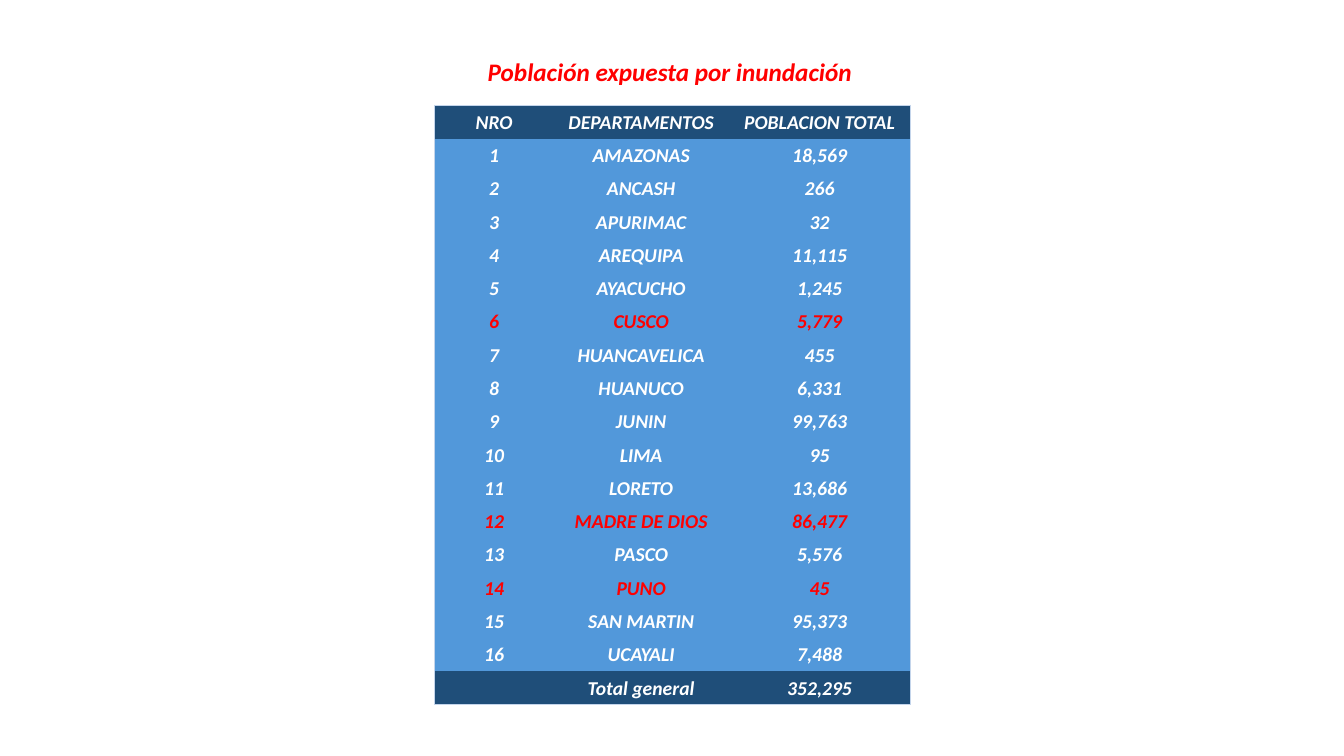
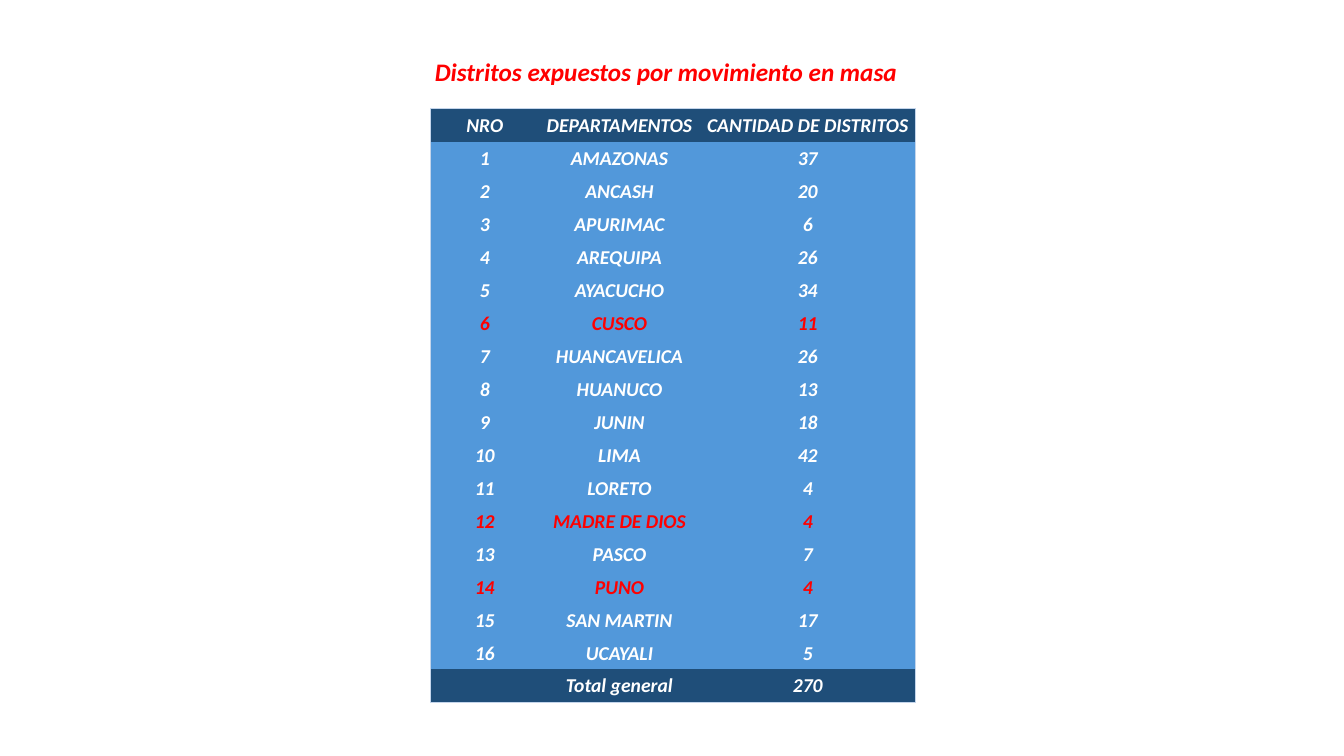
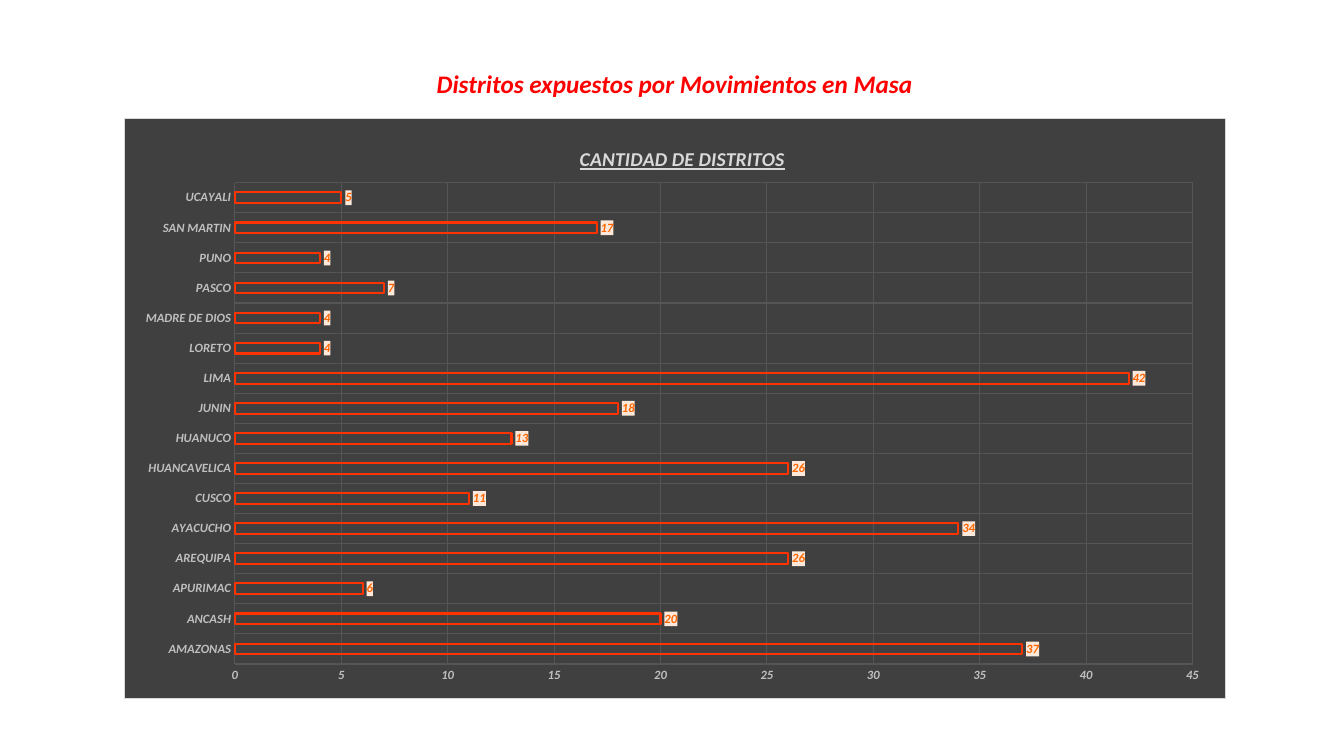
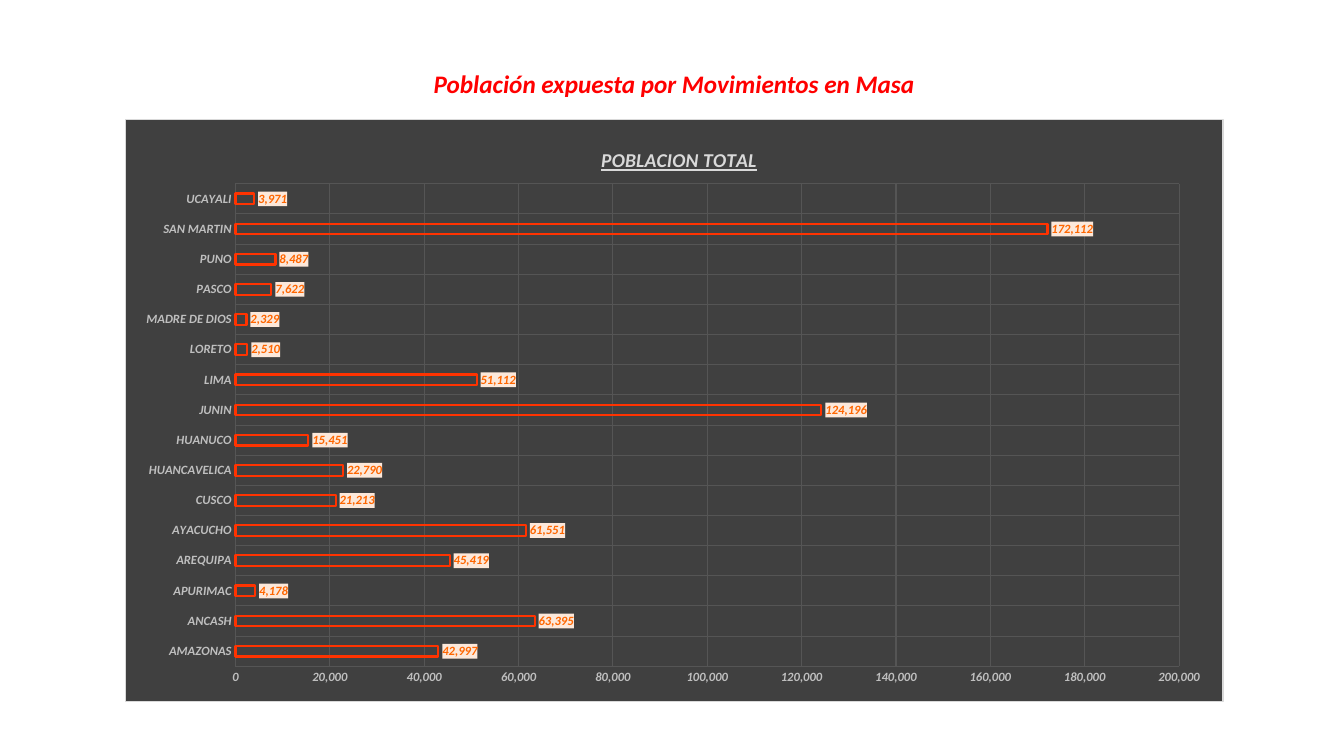
from dataclasses import dataclass
from typing import Any

from lxml.etree import SubElement, fromstring
from pptx import Presentation
from pptx.chart.data import CategoryChartData
from pptx.dml.color import RGBColor
from pptx.enum.chart import XL_CHART_TYPE, XL_LABEL_POSITION, XL_TICK_MARK
from pptx.enum.text import MSO_ANCHOR, MSO_AUTO_SIZE, PP_ALIGN
from pptx.oxml.ns import nsdecls, qn
from pptx.util import Pt


@dataclass(frozen=True)
class Theme:
    font: str = "Calibri"
    red: str = "FF0000"
    white: str = "FFFFFF"
    navy: str = "1F4E79"
    blue: str = "5298DA"
    table_edge: str = "C4D5EB"
    panel: str = "404040"
    panel_edge: str = "D9D9D9"
    grid: str = "555555"
    axis_text: str = "BFBFBF"
    bar_edge: str = "FF3300"
    label_text: str = "FF6600"
    label_fill: str = "FDE8DA"
    title_size: float = 18
    table_size: float = 14
    chart_title_size: float = 14
    chart_size: float = 9


@dataclass(frozen=True)
class Frame:
    """Left, top, width and height in points."""
    left: float
    top: float
    width: float
    height: float

    def lengths(self) -> list[Pt]:
        return [Pt(value) for value in (self.left, self.top, self.width, self.height)]


@dataclass(frozen=True)
class TablePage:
    title: str
    title_frame: Frame
    value_header: str
    values: tuple[int, ...]
    total: int
    left: float
    top: float
    column_widths: tuple[float, ...]
    row_height: float


@dataclass(frozen=True)
class ChartPage:
    title: str
    title_frame: Frame
    chart_title: str
    chart_title_left: float
    values: tuple[int, ...]
    frame: Frame
    plot_width: float
    axis_maximum: int
    axis_step: int


THEME = Theme()
DEPARTMENTS = (
    "AMAZONAS", "ANCASH", "APURIMAC", "AREQUIPA", "AYACUCHO", "CUSCO",
    "HUANCAVELICA", "HUANUCO", "JUNIN", "LIMA", "LORETO", "MADRE DE DIOS",
    "PASCO", "PUNO", "SAN MARTIN", "UCAYALI",
)
HIGHLIGHTED = {"CUSCO", "MADRE DE DIOS", "PUNO"}
FLOOD_POPULATION = (18569, 266, 32, 11115, 1245, 5779, 455, 6331,
                    99763, 95, 13686, 86477, 5576, 45, 95373, 7488)
LANDSLIDE_DISTRICTS = (37, 20, 6, 26, 34, 11, 26, 13, 18, 42, 4, 4, 7, 4, 17, 5)
LANDSLIDE_POPULATION = (42997, 63395, 4178, 45419, 61551, 21213, 22790, 15451,
                        124196, 51112, 2510, 2329, 7622, 8487, 172112, 3971)
NUMBER_FORMAT = "#,##0"

PAGES = (
    TablePage("Población expuesta por inundación", Frame(340, 36.7, 277, 29),
              "POBLACION TOTAL", FLOOD_POPULATION, 352295,
              310.5, 75.2, (85, 125, 130), 23.8),
    TablePage("Distritos expuestos por movimiento en masa", Frame(299.2, 36.7, 353, 29),
              "CANTIDAD DE DISTRITOS", LANDSLIDE_DISTRICTS, 270,
              307.5, 77.6, (77.5, 115, 154), 23.57),
    ChartPage("Distritos expuestos por Movimientos en Masa", Frame(302.6, 45.4, 358.5, 29),
              "CANTIDAD DE DISTRITOS", 0.41, LANDSLIDE_DISTRICTS,
              Frame(88.8, 84.6, 787, 415), 0.87, 45, 5),
    ChartPage("Población expuesta por Movimientos en Masa", Frame(300.5, 45.4, 362, 29),
              "POBLACION TOTAL", 0.43, LANDSLIDE_POPULATION,
              Frame(89.5, 85.3, 784.5, 416), 0.86, 200000, 20000),
)


def set_font(font: Any, size: float, colour: str, **extra: Any) -> None:
    settings = {"name": THEME.font, "size": Pt(size), "bold": True, "italic": True, **extra}
    for name, value in settings.items():
        setattr(font, name, value)
    font.color.rgb = RGBColor.from_string(colour)


def set_line(line: Any, colour: str, width: float) -> None:
    line.color.rgb = RGBColor.from_string(colour)
    line.width = Pt(width)


def add_title(page: Any, text: str, frame: Frame) -> None:
    text_frame = page.shapes.add_textbox(*frame.lengths()).text_frame
    text_frame.word_wrap = False
    text_frame.auto_size = MSO_AUTO_SIZE.SHAPE_TO_FIT_TEXT
    para = text_frame.paragraphs[0]
    para.alignment = PP_ALIGN.CENTER
    span = para.add_run()
    span.text = text
    set_font(span.font, THEME.title_size, THEME.red)


def set_borders(cell: Any, outer_sides: dict[str, bool]) -> None:
    """Draw the sides that lie on the table's edge and clear the others."""
    properties = cell._tc.get_or_add_tcPr()
    for index, (side, is_outer) in enumerate(outer_sides.items()):
        paint = (f'<a:solidFill><a:srgbClr val="{THEME.table_edge}"/></a:solidFill>'
                 if is_outer else "<a:noFill/>")
        border = fromstring(f'<a:ln{side} {nsdecls("a")} w="{Pt(0.5)}">{paint}</a:ln{side}>')
        properties.insert(index, border)


def fill_cell(cell: Any, text: str, colour: str, fill: str) -> None:
    settings = {"margin_left": Pt(0.7), "margin_top": Pt(0.7), "margin_right": Pt(0.7),
                "margin_bottom": Pt(0), "vertical_anchor": MSO_ANCHOR.MIDDLE}
    for name, value in settings.items():
        setattr(cell, name, value)
    cell.fill.solid()
    cell.fill.fore_color.rgb = RGBColor.from_string(fill)
    if text:
        para = cell.text_frame.paragraphs[0]
        para.alignment = PP_ALIGN.CENTER
        span = para.add_run()
        span.text = text
        set_font(span.font, THEME.table_size, colour)


def add_department_table(page: Any, content: TablePage) -> None:
    rows = [("NRO", "DEPARTAMENTOS", content.value_header)]
    rows += [(str(number), name, f"{value:,}") for number, (name, value)
             in enumerate(zip(DEPARTMENTS, content.values), start=1)]
    rows.append(("", "Total general", f"{content.total:,}"))
    last_row, last_column = len(rows) - 1, len(content.column_widths) - 1

    frame = Frame(content.left, content.top, sum(content.column_widths),
                  content.row_height * len(rows))
    table = page.shapes.add_table(len(rows), last_column + 1, *frame.lengths()).table
    table.first_row = table.horz_banding = False
    for column, width in zip(table.columns, content.column_widths):
        column.width = Pt(width)
    for row_index, texts in enumerate(rows):
        table.rows[row_index].height = Pt(content.row_height)
        fill = THEME.navy if row_index in (0, last_row) else THEME.blue
        colour = THEME.red if texts[1] in HIGHLIGHTED else THEME.white
        for column_index, text in enumerate(texts):
            cell = table.cell(row_index, column_index)
            fill_cell(cell, text, colour, fill)
            set_borders(cell, {"L": column_index == 0, "R": column_index == last_column,
                               "T": row_index == 0, "B": row_index == last_row})


def make_layout(**values: Any) -> Any:
    """Build a manual chart layout from fractions of the chart's size."""
    layout = fromstring(f'<c:layout {nsdecls("c")}/>')
    manual = SubElement(layout, qn("c:manualLayout"))
    for name, value in values.items():
        SubElement(manual, qn(f"c:{name}")).set("val", str(value))
    return layout


def drop_layout(element: Any) -> None:
    for layout in element.findall(qn("c:layout")):
        element.remove(layout)


def make_box_format(fill: str, edge: str = "") -> Any:
    line = (f'<a:ln w="{Pt(0.75)}"><a:solidFill><a:srgbClr val="{edge}"/></a:solidFill></a:ln>'
            if edge else "")
    return fromstring(f'<c:spPr {nsdecls("c", "a")}><a:solidFill><a:srgbClr val="{fill}"/>'
                      f'</a:solidFill>{line}</c:spPr>')


def format_chart_title(chart: Any, content: ChartPage) -> None:
    chart.has_title = True
    title = chart.chart_title
    title.include_in_layout = False
    span = title.text_frame.paragraphs[0].add_run()
    span.text = content.chart_title
    set_font(span.font, THEME.chart_title_size, THEME.panel_edge, underline=True)
    element = title._element
    drop_layout(element)
    element.find(qn("c:tx")).addnext(
        make_layout(xMode="edge", yMode="edge", x=content.chart_title_left, y=0.04))


def format_axes(chart: Any, content: ChartPage) -> None:
    for axis in (chart.category_axis, chart.value_axis):
        axis.major_tick_mark = axis.minor_tick_mark = XL_TICK_MARK.NONE
        axis.has_major_gridlines = True
        set_line(axis.major_gridlines.format.line, THEME.grid, 0.75)
        axis.format.line.fill.background()
        set_font(axis.tick_labels.font, THEME.chart_size, THEME.axis_text)
    scale = {"minimum_scale": 0, "maximum_scale": content.axis_maximum,
             "major_unit": content.axis_step}
    for name, value in scale.items():
        setattr(chart.value_axis, name, value)
    labels = chart.value_axis.tick_labels
    labels.number_format, labels.number_format_is_linked = NUMBER_FORMAT, False


def format_bars(chart: Any) -> None:
    plot = chart.plots[0]
    plot.gap_width, plot.overlap, plot.vary_by_categories = 182, -50, False
    series = plot.series[0]
    series.format.fill.background()
    set_line(series.format.line, THEME.bar_edge, 1.5)
    labels = series.data_labels
    settings = {"show_value": True, "position": XL_LABEL_POSITION.OUTSIDE_END,
                "number_format": NUMBER_FORMAT, "number_format_is_linked": False}
    for name, value in settings.items():
        setattr(labels, name, value)
    set_font(labels.font, THEME.chart_size, THEME.label_text)
    labels._element.find(qn("c:txPr")).addprevious(make_box_format(THEME.label_fill))


def add_department_chart(page: Any, content: ChartPage) -> None:
    data = CategoryChartData(number_format=NUMBER_FORMAT)
    data.categories = DEPARTMENTS
    data.add_series("Series 1", content.values)
    chart = page.shapes.add_chart(XL_CHART_TYPE.BAR_CLUSTERED,
                                  *content.frame.lengths(), data).chart
    chart.has_legend = False
    chart.font.name, chart.font.size = THEME.font, Pt(10)
    chart._chartSpace.find(qn("c:txPr")).addprevious(
        make_box_format(THEME.panel, THEME.panel_edge))
    format_chart_title(chart, content)
    format_axes(chart, content)
    format_bars(chart)
    plot_area = chart._chartSpace.chart.plotArea
    drop_layout(plot_area)
    plot_area.insert(0, make_layout(layoutTarget="inner", xMode="edge", yMode="edge",
                                    x=0.1, y=0.11, w=content.plot_width, h=0.83))


def main() -> None:
    deck = Presentation()
    deck.slide_width, deck.slide_height = Pt(960), Pt(540)
    for content in PAGES:
        page = deck.slides.add_slide(deck.slide_layouts[6])
        add_title(page, content.title, content.title_frame)
        if isinstance(content, TablePage):
            add_department_table(page, content)
        else:
            add_department_chart(page, content)
    deck.save("out.pptx")


if __name__ == "__main__":
    main()
